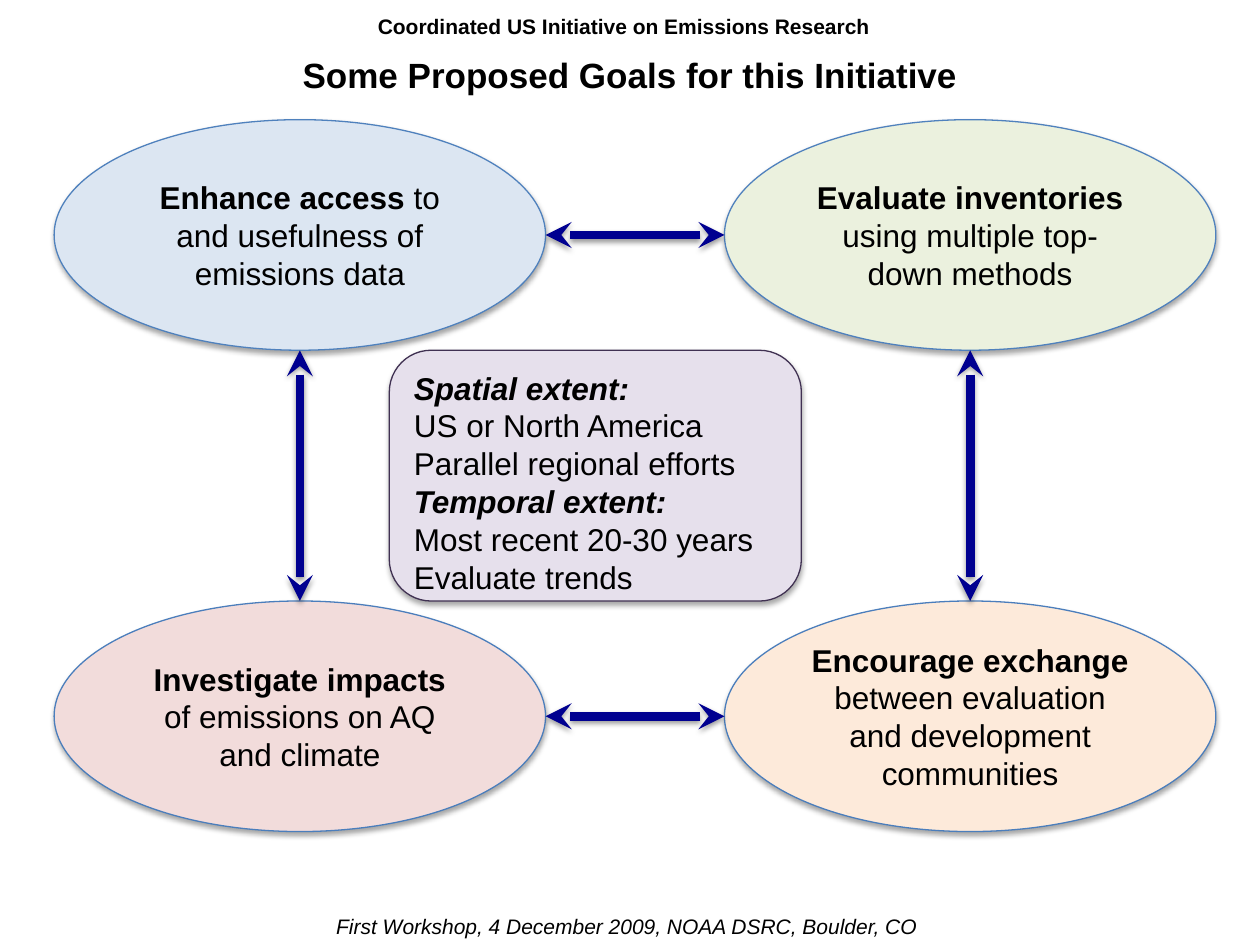
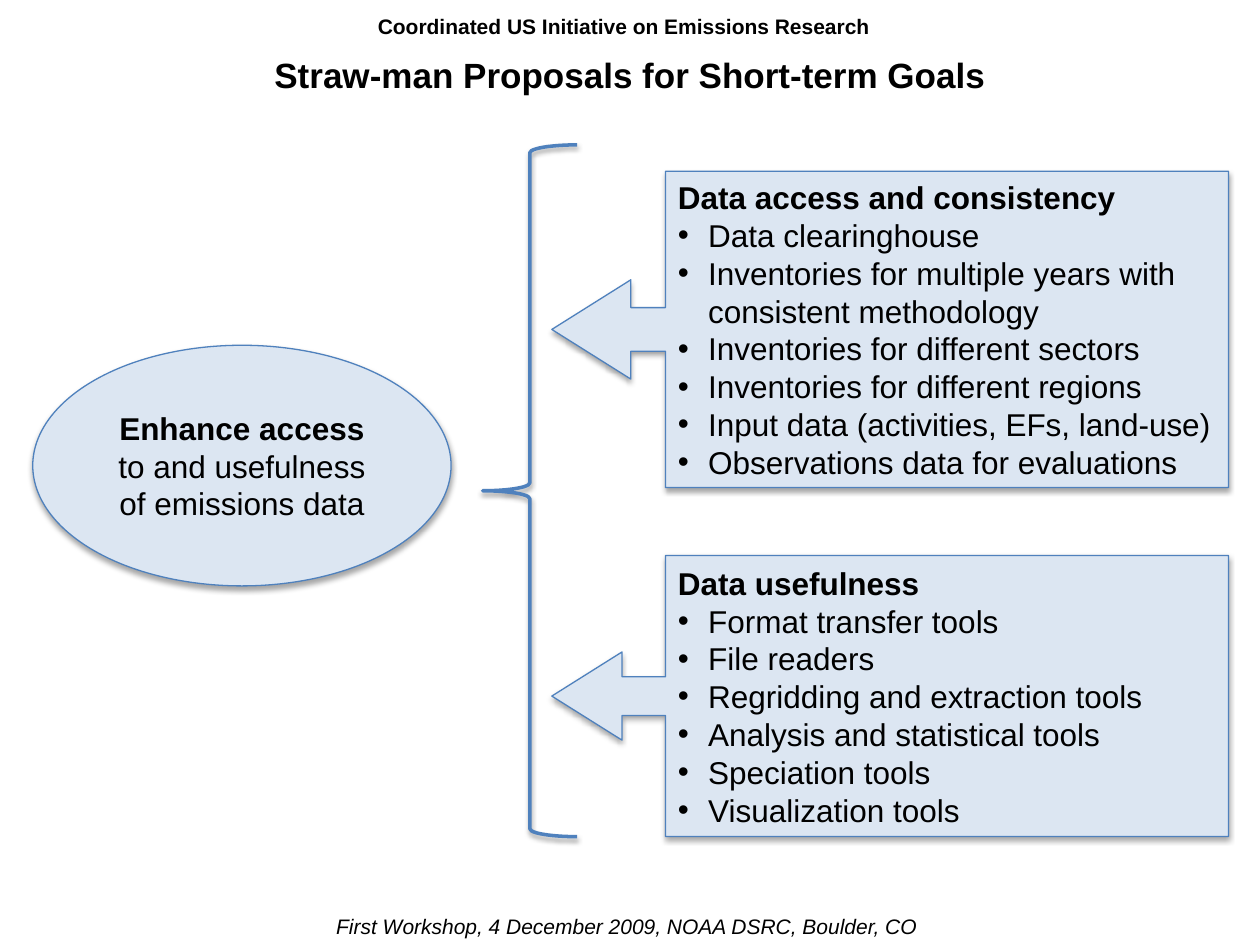
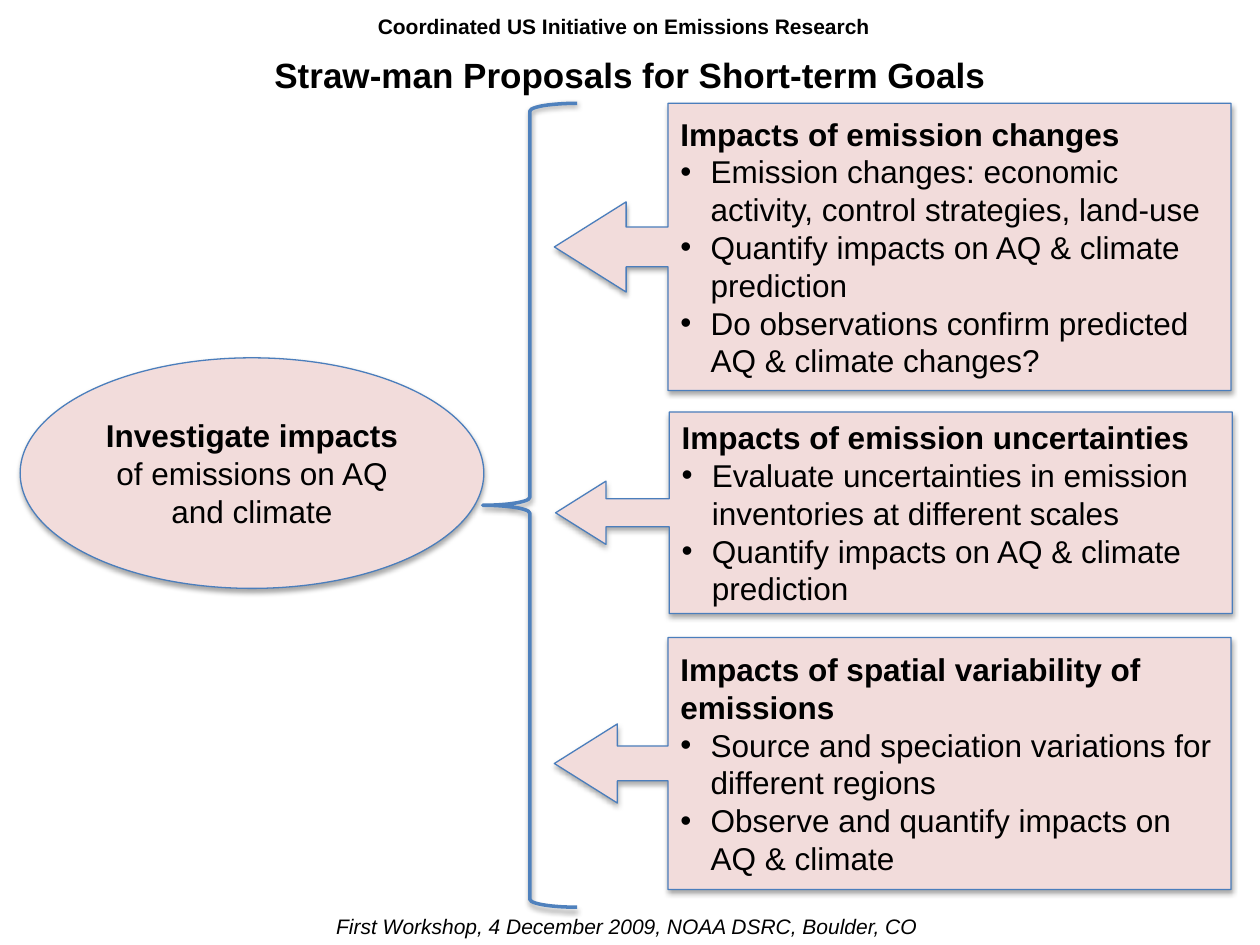
import pptx
import pptx.dml.color
import pptx.enum.shapes
import pptx.enum.text
import pptx.oxml
import pptx.oxml.ns
import pptx.util

Inches = pptx.util.Inches
SHAPE = pptx.enum.shapes.MSO_SHAPE
ANCHOR = pptx.enum.text.MSO_ANCHOR
ALIGN = pptx.enum.text.PP_ALIGN
DRAWING = pptx.oxml.ns.nsdecls("a")

# Shared look
FONT = "Arial"
BLACK = "000000"
BLUE = "4F81BD"
MUTED_BLUE = "4B7EBC"
NAVY = "000090"
HEADER = "Coordinated US Initiative on Emissions Research"
FOOTER = "First Workshop, 4 December 2009, NOAA DSRC, Boulder, CO"
SHORT_TERM = "Straw-man Proposals for Short-term Goals"

# Goals: bold lead, remaining text, fill, outline
GOALS = {
    "access": ("Enhance access ", "to and usefulness of emissions data", "DCE6F2", BLUE),
    "inventories": ("Evaluate inventories ", "using multiple top-down methods", "EBF1DE", BLUE),
    "exchange": ("Encourage exchange ", "between evaluation and development communities",
                 "FDEADA", MUTED_BLUE),
    "impacts": ("Investigate impacts ", "of emissions on AQ and climate", "F2DCDB", MUTED_BLUE),
}


def write_text(shape, text, size=18, bold=False, italic=False, align=ALIGN.LEFT,
               bullet=False, same_paragraph=False):
    """Add text to a shape, in a new paragraph unless told otherwise."""
    frame = shape.text_frame
    frame.word_wrap = True
    paragraph = frame.paragraphs[-1]
    if paragraph.runs and not same_paragraph:
        paragraph = frame.add_paragraph()
    paragraph.alignment = align
    if bullet:
        properties = paragraph._p.get_or_add_pPr()
        properties.set("marL", str(Inches(0.24)))
        properties.set("indent", str(Inches(-0.24)))
        properties.append(pptx.oxml.parse_xml(f'<a:buFont {DRAWING} typeface="Arial"/>'))
        properties.append(pptx.oxml.parse_xml(f'<a:buChar {DRAWING} char="•"/>'))
    run = paragraph.add_run()
    run.text = text
    run.font.name = FONT
    run.font.size = pptx.util.Pt(size)
    run.font.bold = bold
    run.font.italic = italic
    run.font.color.rgb = pptx.dml.color.RGBColor.from_string(BLACK)


def style_shape(shape, line, width=0.75, fill=None, shadow_opacity=35, shadow_distance=1.8):
    """Set outline, fill and a soft shadow below; connectors have no fill."""
    if fill:
        shape.fill.solid()
        shape.fill.fore_color.rgb = pptx.dml.color.RGBColor.from_string(fill)
    elif hasattr(shape, "fill"):
        shape.fill.background()
    shape.line.color.rgb = pptx.dml.color.RGBColor.from_string(line)
    shape.line.width = pptx.util.Pt(width)
    shape.element.spPr.append(pptx.oxml.parse_xml(
        f'<a:effectLst {DRAWING}><a:outerShdw blurRad="{pptx.util.Pt(3.1)}" '
        f'dist="{pptx.util.Pt(shadow_distance)}" dir="5400000" rotWithShape="0">'
        f'<a:srgbClr val="{BLACK}"><a:alpha val="{shadow_opacity * 1000}"/></a:srgbClr>'
        '</a:outerShdw></a:effectLst>'))


presentation = pptx.Presentation()
presentation.slide_width = Inches(10)
presentation.slide_height = Inches(7.5)

# Title, header and footer of every slide, and its goal ellipses
column_lefts = (0.43, 5.75)
row_tops = (0.95, 4.77)
goal_width, goal_height = 3.9, 1.83
slide_plans = [
    ("Some Proposed Goals for this Initiative", [
        ("access", column_lefts[0], row_tops[0], goal_width, goal_height),
        ("inventories", column_lefts[1], row_tops[0], goal_width, goal_height),
        ("exchange", column_lefts[1], row_tops[1], goal_width, goal_height),
        ("impacts", column_lefts[0], row_tops[1], goal_width, goal_height),
    ]),
    (SHORT_TERM, [("access", 0.26, 2.74, 3.32, 1.91)]),
    (SHORT_TERM, [("impacts", 0.16, 2.84, 3.68, 1.83)]),
]
for title_text, ellipses in slide_plans:
    slide = presentation.slides.add_slide(presentation.slide_layouts[5])
    title = slide.shapes.title
    title.left, title.top = Inches(0), Inches(0.37)
    title.width, title.height = Inches(10), Inches(0.45)
    title.text_frame.vertical_anchor = ANCHOR.MIDDLE
    write_text(title, title_text, size=20, bold=True, align=ALIGN.CENTER)

    footer = slide.shapes.add_textbox(Inches(2.57), Inches(7.2), Inches(4.86), Inches(0.3))
    write_text(footer, FOOTER, size=12, italic=True)
    header = slide.shapes.add_textbox(Inches(2.9), Inches(0.06), Inches(4.19), Inches(0.3))
    write_text(header, HEADER, size=12, bold=True)

    for goal, left, top, width, height in ellipses:
        lead, rest, fill, line = GOALS[goal]
        ellipse = slide.shapes.add_shape(
            SHAPE.OVAL, Inches(left), Inches(top), Inches(width), Inches(height))
        style_shape(ellipse, line, fill=fill)
        write_text(ellipse, lead, bold=True, align=ALIGN.CENTER)
        write_text(ellipse, rest, align=ALIGN.CENTER, same_paragraph=True)

overview, access_slide, impacts_slide = presentation.slides

# Overview: double arrows between neighbouring goals
arrow_ends = []
for top in row_tops:
    middle = top + goal_height / 2
    arrow_ends.append((column_lefts[0] + goal_width, middle, column_lefts[1], middle))
for left in column_lefts:
    center = left + goal_width / 2
    arrow_ends.append((center, row_tops[0] + goal_height, center, row_tops[1]))
for ends in arrow_ends:
    arrow = overview.shapes.add_connector(
        pptx.enum.shapes.MSO_CONNECTOR.STRAIGHT, *[Inches(end) for end in ends])
    style_shape(arrow, NAVY, width=5, shadow_opacity=38, shadow_distance=1.6)
    for arrowhead in ("headEnd", "tailEnd"):
        arrow.line._get_or_add_ln().append(
            pptx.oxml.parse_xml(f'<a:{arrowhead} {DRAWING} type="stealth"/>'))

# Overview: extent box in the centre
extent_box = overview.shapes.add_shape(
    SHAPE.ROUNDED_RECTANGLE, Inches(3.09), Inches(2.78), Inches(3.27), Inches(1.99))
style_shape(extent_box, "403152", fill="E6E0EC")
extent_box.text_frame.vertical_anchor = ANCHOR.TOP
for heading, details in [
    ("Spatial extent:", ["US or North America", "Parallel regional efforts"]),
    ("Temporal extent:", ["Most recent 20-30 years", "Evaluate trends"]),
]:
    write_text(extent_box, heading, bold=True, italic=True)
    for detail in details:
        write_text(extent_box, detail)

# Short-term goals: a brace and callouts (left, top, height, heading, bullets)
short_term_plans = [
    (access_slide, "access", 1.15, 5.49, [
        (4.38, 1.36, 2.51, "Data access and consistency", [
            "Data clearinghouse",
            "Inventories for multiple years with consistent methodology",
            "Inventories for different sectors",
            "Inventories for different regions",
            "Input data (activities, EFs, land-use)",
            "Observations data for evaluations",
        ]),
        (4.38, 4.41, 2.23, "Data usefulness", [
            "Format transfer tools",
            "File readers",
            "Regridding and extraction tools",
            "Analysis and statistical tools",
            "Speciation tools",
            "Visualization tools",
        ]),
    ]),
    (impacts_slide, "impacts", 0.82, 6.38, [
        (4.4, 0.82, 2.28, "Impacts of emission changes", [
            "Emission changes: economic activity, control strategies, land-use",
            "Quantify impacts on AQ & climate prediction",
            "Do observations confirm predicted AQ & climate changes?",
        ]),
        (4.41, 3.27, 1.6, "Impacts of emission uncertainties", [
            "Evaluate uncertainties in emission inventories at different scales",
            "Quantify impacts on AQ & climate prediction",
        ]),
        (4.4, 5.06, 2, "Impacts of spatial variability of emissions", [
            "Source and speciation variations for different regions",
            "Observe and quantify impacts on AQ & climate",
        ]),
    ]),
]
for slide, goal, brace_top, brace_height, callouts in short_term_plans:
    brace = slide.shapes.add_shape(
        SHAPE.LEFT_BRACE, Inches(3.83), Inches(brace_top), Inches(0.75), Inches(brace_height))
    style_shape(brace, BLUE, width=2, shadow_opacity=38, shadow_distance=1.6)

    fill, line = GOALS[goal][2:]
    for left, top, height, heading, bullets in callouts:
        callout = slide.shapes.add_shape(
            SHAPE.LEFT_ARROW_CALLOUT, Inches(left), Inches(top), Inches(5.37), Inches(height))
        for index, adjustment in enumerate((0.138, 0.157, 0.25, 0.832)):
            callout.adjustments[index] = adjustment
        style_shape(callout, line, fill=fill)
        write_text(callout, heading, bold=True)
        for bullet_text in bullets:
            write_text(callout, bullet_text, bullet=True)

presentation.save("out.pptx")
